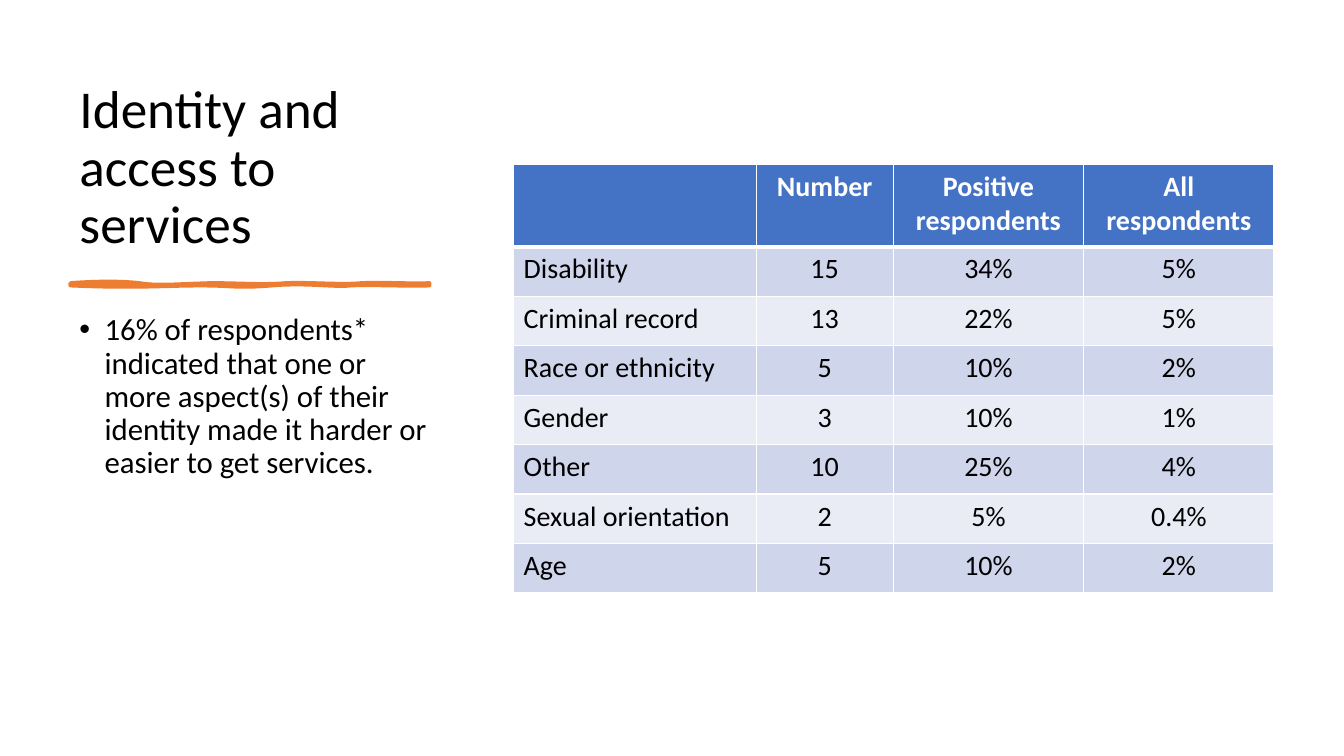
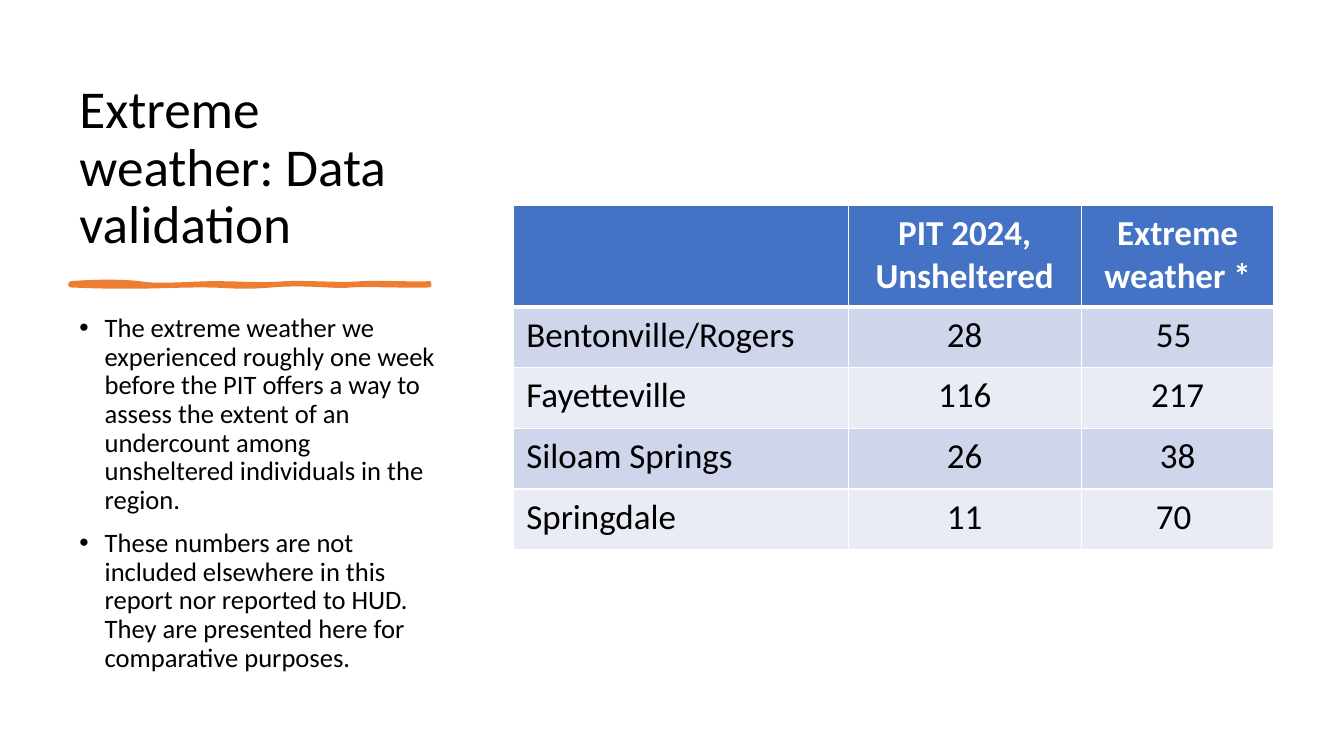
from dataclasses import dataclass

from lxml.etree import SubElement as Sub
from pptx import Presentation
from pptx.dml.color import RGBColor as Rgb
from pptx.enum.text import MSO_ANCHOR as Anchor, PP_ALIGN as Align
from pptx.oxml.ns import qn
from pptx.util import Pt

# Shared look
FONT = "Calibri"
BLACK, WHITE, BLUE, ORANGE = "000000", "FFFFFF", "4472C4", "ED7D31"
BANDS = ("CFD5EA", "E9EBF5")
LEFT, WIDE = 49.7, 270
GRID_X = 366.5

# Brush stroke: a start point, then cubic curves (two controls and an end)
START = (50.4, 202.3)
TOP = [
    ((69.8, 200.9), (87.1, 200.9), (99.4, 202.3)),
    ((111.6, 204.5), (127.4, 203), (150.5, 202.3)),
    ((173.5, 202.3), (187.2, 203.8), (204.5, 202.3)),
    ((221.8, 201.6), (244.1, 203.8), (258.5, 202.3)),
    ((272.9, 201.6), (296.6, 203), (306.7, 202.3)),
]
END = ((306.7, 203), (306.7, 203.8), (306.7, 203.8))
BASE = [
    ((293.8, 204.5), (262.1, 203), (250.6, 203.8)),
    ((239, 205.2), (218.9, 201.6), (194.4, 203.8)),
    ((169.2, 205.9), (166.3, 203.8), (143.3, 203.8)),
    ((119.5, 203.8), (95, 205.9), (50.4, 203.8)),
]
STEPS = 10


@dataclass
class Grid:
    top: float
    cols: list[float]
    head: float
    row: float
    size: float
    pad: tuple[float, float]
    cells: list[list[str]]


@dataclass
class Page:
    title: str
    points: list[str]
    size: float
    grid: Grid


PAGES = [
    Page(
        "Identity and access to services",
        ["16% of respondents* indicated that one or more aspect(s) of their "
         "identity made it harder or easier to get services."],
        22,
        Grid(117.4, [173.6, 98, 136, 136], 59, 35.3, 20, (7.6, 3.8), [
            ["", "Number", "Positive respondents", "All respondents"],
            ["Disability", "15", "34%", "5%"],
            ["Criminal record", "13", "22%", "5%"],
            ["Race or ethnicity", "5", "10%", "2%"],
            ["Gender", "3", "10%", "1%"],
            ["Other", "10", "25%", "4%"],
            ["Sexual orientation", "2", "5%", "0.4%"],
            ["Age", "5", "10%", "2%"],
        ]),
    ),
    Page(
        "Extreme weather: Data validation",
        ["The extreme weather we experienced roughly one week before the PIT "
         "offers a way to assess the extent of an undercount among "
         "unsheltered individuals in the region.",
         "These numbers are not included elsewhere in this report nor "
         "reported to HUD. They are presented here for comparative purposes."],
        19,
        Grid(147, [239.4, 166.4, 137.8], 72.5, 43.3, 25, (9.5, 4.8), [
            ["", "PIT 2024, Unsheltered", "Extreme weather *"],
            ["Bentonville/Rogers", "28", "55 "],
            ["Fayetteville", "116", "217"],
            ["Siloam Springs", "26", "38"],
            ["Springdale", "11", "70 "],
        ]),
    ),
]


def paint(fill, tint: str) -> None:
    fill.solid()
    fill.fore_color.rgb = Rgb.from_string(tint)


def style(para, size: float, tint: str = BLACK, bold: bool = False) -> None:
    for run in para.runs:
        run.font.name = FONT
        run.font.size = Pt(size)
        run.font.bold = bold
        run.font.color.rgb = Rgb.from_string(tint)


def add_text(slide, top: float, high: float, lines: list[str], size: float):
    box = slide.shapes.add_textbox(Pt(LEFT), Pt(top), Pt(WIDE), Pt(high))
    frame = box.text_frame
    frame.word_wrap = True
    frame.text = "\n".join(lines)
    for para in frame.paragraphs:
        para.line_spacing = 0.9
        style(para, size)
    return frame


def add_points(slide, page: Page) -> None:
    frame = add_text(slide, 221, 268.6, page.points, page.size)
    for para in frame.paragraphs:
        para.space_before = Pt(10)
        props = para._p.get_or_add_pPr()
        props.set("marL", str(Pt(18)))
        props.set("indent", str(-Pt(18)))
        Sub(props, qn("a:buFont")).set("typeface", "Arial")
        Sub(props, qn("a:buChar")).set("char", "•")


def add_stroke(slide) -> None:
    dots, last = [], START
    for one, two, end in [*TOP, END, *BASE]:
        for step in range(1, STEPS + 1):
            t = step / STEPS
            u = 1 - t
            dots.append(tuple(
                Pt(u**3 * a + 3 * u * u * t * b + 3 * u * t * t * c + t**3 * d)
                for a, b, c, d in zip(last, one, two, end)
            ))
        last = end
    path = slide.shapes.build_freeform(Pt(START[0]), Pt(START[1]))
    path.add_line_segments(dots, close=True)
    shape = path.convert_to_shape()
    shape.shadow.inherit = False
    paint(shape.fill, ORANGE)
    paint(shape.line.fill, ORANGE)
    shape.line.width = Pt(3)


def edge(cell, sides: dict[str, float]) -> None:
    props = cell._tc.get_or_add_tcPr()
    for spot, (side, width) in enumerate(sides.items()):
        line = Sub(props, qn(f"a:ln{side}"), w=str(Pt(width)))
        Sub(Sub(line, qn("a:solidFill")), qn("a:srgbClr"), val=WHITE)
        props.insert(spot, line)


def add_grid(slide, grid: Grid) -> None:
    highs = [grid.head] + [grid.row] * (len(grid.cells) - 1)
    table = slide.shapes.add_table(
        len(highs), len(grid.cols), Pt(GRID_X), Pt(grid.top),
        Pt(sum(grid.cols)), Pt(sum(highs))).table
    for col, width in zip(table.columns, grid.cols):
        col.width = Pt(width)
    for r, (row, high) in enumerate(zip(table.rows, highs)):
        row.height = Pt(high)
        head = r == 0
        for c, cell in enumerate(row.cells):
            cell.margin_left = cell.margin_right = Pt(grid.pad[0])
            cell.margin_top = cell.margin_bottom = Pt(grid.pad[1])
            paint(cell.fill, BLUE if head else BANDS[(r - 1) % 2])
            edge(cell, {"L": 1, "R": 1, "T": 3 if r == 1 else 1,
                        "B": 3 if head else 1})
            para = cell.text_frame.paragraphs[0]
            para.text = grid.cells[r][c]
            para.alignment = Align.CENTER if head or c else Align.LEFT
            style(para, grid.size, WHITE if head else BLACK, head)


def main() -> None:
    deck = Presentation()
    deck.slide_width, deck.slide_height = Pt(960), Pt(540)
    for page in PAGES:
        slide = deck.slides.add_slide(deck.slide_layouts[6])
        title = add_text(slide, 50.4, 135.4, [page.title], 38)
        title.vertical_anchor = Anchor.BOTTOM
        add_stroke(slide)
        add_points(slide, page)
        add_grid(slide, page.grid)
    deck.save("out.pptx")


if __name__ == "__main__":
    main()
